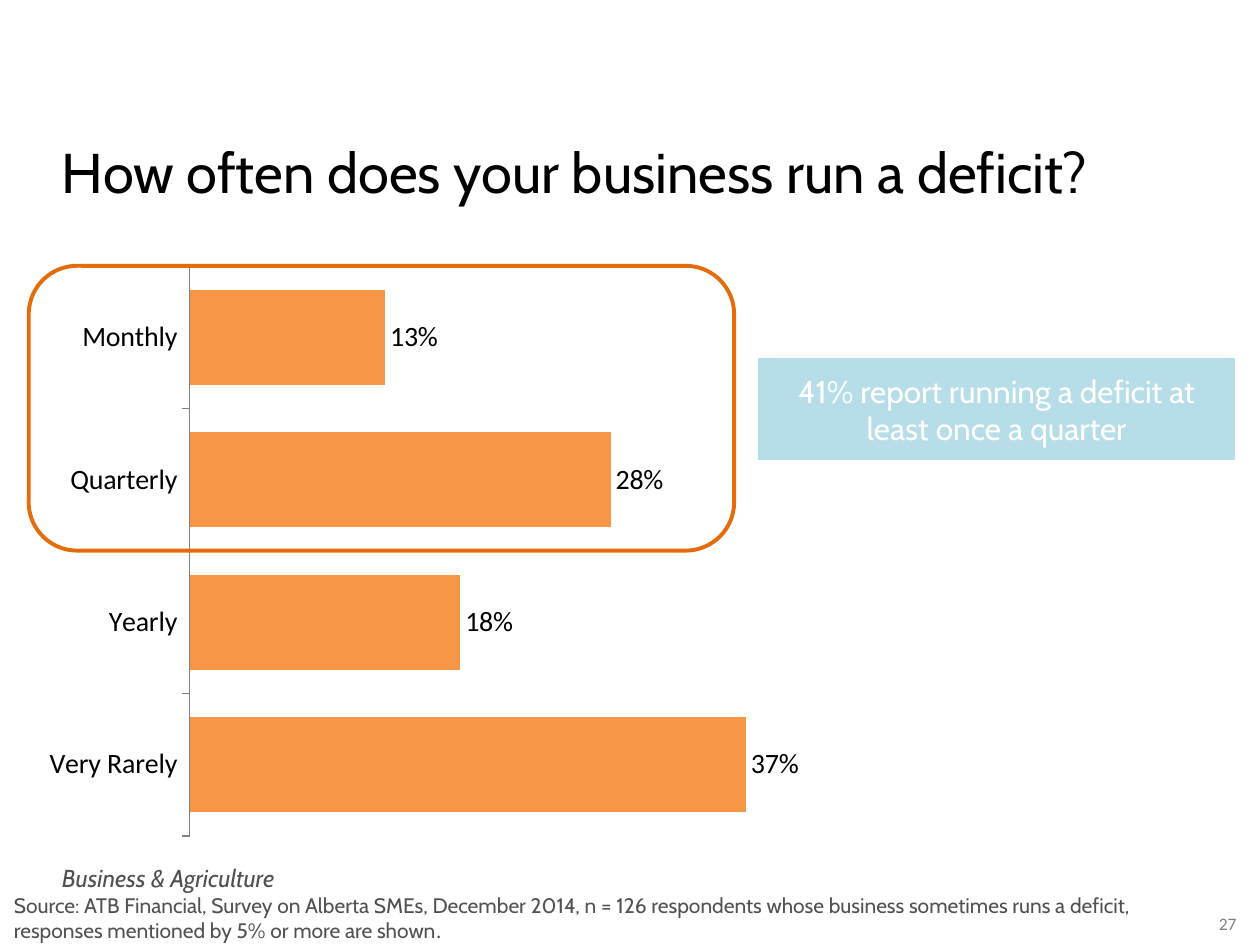
from lxml import etree
from pptx import Presentation
from pptx.chart.data import CategoryChartData
from pptx.dml.color import RGBColor
from pptx.enum.chart import XL_CHART_TYPE as ChartType, XL_LABEL_POSITION as LabelPosition
from pptx.enum.chart import XL_TICK_LABEL_POSITION as TickLabels, XL_TICK_MARK as TickMark
from pptx.enum.shapes import MSO_SHAPE as Shape
from pptx.enum.text import MSO_ANCHOR as Anchor, PP_ALIGN as Align
from pptx.oxml.ns import qn
from pptx.util import Cm, Pt

BLACK = RGBColor(0x00, 0x00, 0x00)
WHITE = RGBColor(0xFF, 0xFF, 0xFF)
DARK_GRAY = RGBColor(0x50, 0x51, 0x50)
GRAY = RGBColor(0x80, 0x80, 0x80)
ORANGE = RGBColor(0xF7, 0x96, 0x46)
DARK_ORANGE = RGBColor(0xE4, 0x6C, 0x0A)
PALE_BLUE = RGBColor(0xB7, 0xDE, 0xE8)


def write(box, text, size, color, font="Cabin", align=Align.LEFT, anchor=Anchor.TOP):
    frame = box.text_frame
    frame.word_wrap = True
    frame.vertical_anchor = anchor
    para = frame.paragraphs[0]
    para.text = text
    para.alignment = align
    para.font.size = Pt(size)
    para.font.name = font
    para.font.color.rgb = color
    return para


deck = Presentation()
deck.slide_width, deck.slide_height = Cm(25.4), Cm(19.05)
page = deck.slides.add_slide(deck.slide_layouts[6])
shapes = page.shapes

# Page number and section name
number = shapes.add_textbox(Cm(24.13), Cm(18.29), Cm(1.24), Cm(0.69))
write(number, "27", 10, GRAY, "Calibri", Align.CENTER)
section = shapes.add_textbox(Cm(1), Cm(17.27), Cm(7.14), Cm(0.86))
write(section, "Business & Agriculture", 14, DARK_GRAY).font.italic = True

# Bar chart of deficit frequency
data = CategoryChartData(number_format="0%")
data.categories = ["Very Rarely", "Yearly", "Quarterly", "Monthly"]
data.add_series("Series 1", [0.37, 0.18, 0.28, 0.13])
chart = shapes.add_chart(ChartType.BAR_CLUSTERED, Cm(1), Cm(5), Cm(15.57), Cm(12.22), data).chart
chart.has_legend = False
chart.has_title = False
chart.font.size = Pt(18)
chart.font.name = "Cabin"
chart.font.color.rgb = BLACK

plot = chart.plots[0]
plot.gap_width = 50
plot.vary_by_categories = False
bars = plot.series[0].format.fill
bars.solid()
bars.fore_color.rgb = ORANGE
plot.has_data_labels = True
labels = plot.data_labels
labels.show_value = True
labels.position = LabelPosition.OUTSIDE_END
labels.number_format = "0%"
labels.number_format_is_linked = False

categories = chart.category_axis
categories.major_tick_mark = TickMark.OUTSIDE
categories.has_major_gridlines = False
categories.format.line.color.rgb = GRAY
for font in (labels.font, categories.tick_labels.font):
    font.size = Pt(16)
    font.name = "Calibri"
    font.color.rgb = BLACK

values = chart.value_axis
values.minimum_scale, values.maximum_scale = 0, 0.4
values.has_major_gridlines = False
values.tick_label_position = TickLabels.NONE
values.visible = False

# Fixed inner plot area
plot_area = plot._element.getparent()
for old in plot_area.findall(qn("c:layout")):
    plot_area.remove(old)
layout = etree.Element(qn("c:layout"))
plot_area.insert(0, layout)
manual = etree.SubElement(layout, qn("c:manualLayout"))
for tag, value in (("layoutTarget", "inner"), ("xMode", "edge"), ("yMode", "edge"),
                   ("x", "0.18"), ("y", "0.03"), ("w", "0.78"), ("h", "0.94")):
    etree.SubElement(manual, qn(f"c:{tag}")).set("val", value)

# Source line
source = shapes.add_textbox(Cm(0.03), Cm(17.86), Cm(23.65), Cm(1.27))
para = write(source, "Source: ATB Financial, Survey on Alberta SMEs, December 2014, n = 126 respondents "
             "whose business sometimes runs a deficit, responses mentioned by 5% or more are shown",
             12, DARK_GRAY)
span = para.add_run()
span.text = "."
span.font.name = "Calibri"

# Outline around the two most frequent answers
outline = shapes.add_shape(Shape.ROUNDED_RECTANGULAR_CALLOUT, Cm(0.58), Cm(5.36), Cm(14.22), Cm(5.74))
outline.shadow.inherit = False
for index, value in enumerate((0.5, 0.27, 0.17)):
    outline.adjustments[index] = value
outline.fill.background()
outline.line.color.rgb = DARK_ORANGE
outline.line.width = Pt(2.25)

# Title
title = shapes.add_textbox(Cm(1), Cm(2.44), Cm(23.42), Cm(2.01))
write(title, "How often does your business run a deficit?", 32, BLACK, anchor=Anchor.MIDDLE)

# Key finding
finding = shapes.add_shape(Shape.RECTANGLE, Cm(15.29), Cm(7.24), Cm(9.6), Cm(2.03))
finding.shadow.inherit = False
finding.fill.solid()
finding.fill.fore_color.rgb = PALE_BLUE
finding.line.color.rgb = PALE_BLUE
finding.line.width = Pt(0.75)
write(finding, "41% report running a deficit at least once a quarter", 18, WHITE,
      align=Align.CENTER, anchor=Anchor.MIDDLE)

deck.save("out.pptx")
